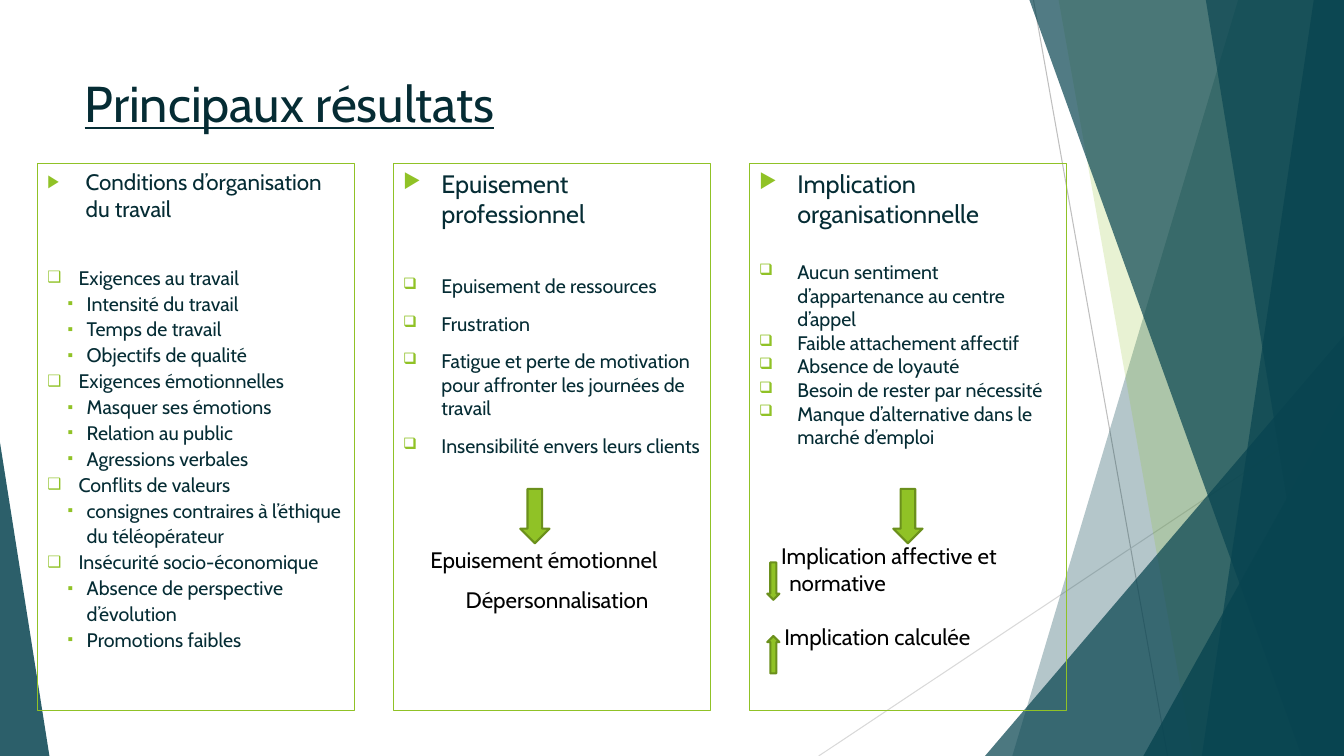
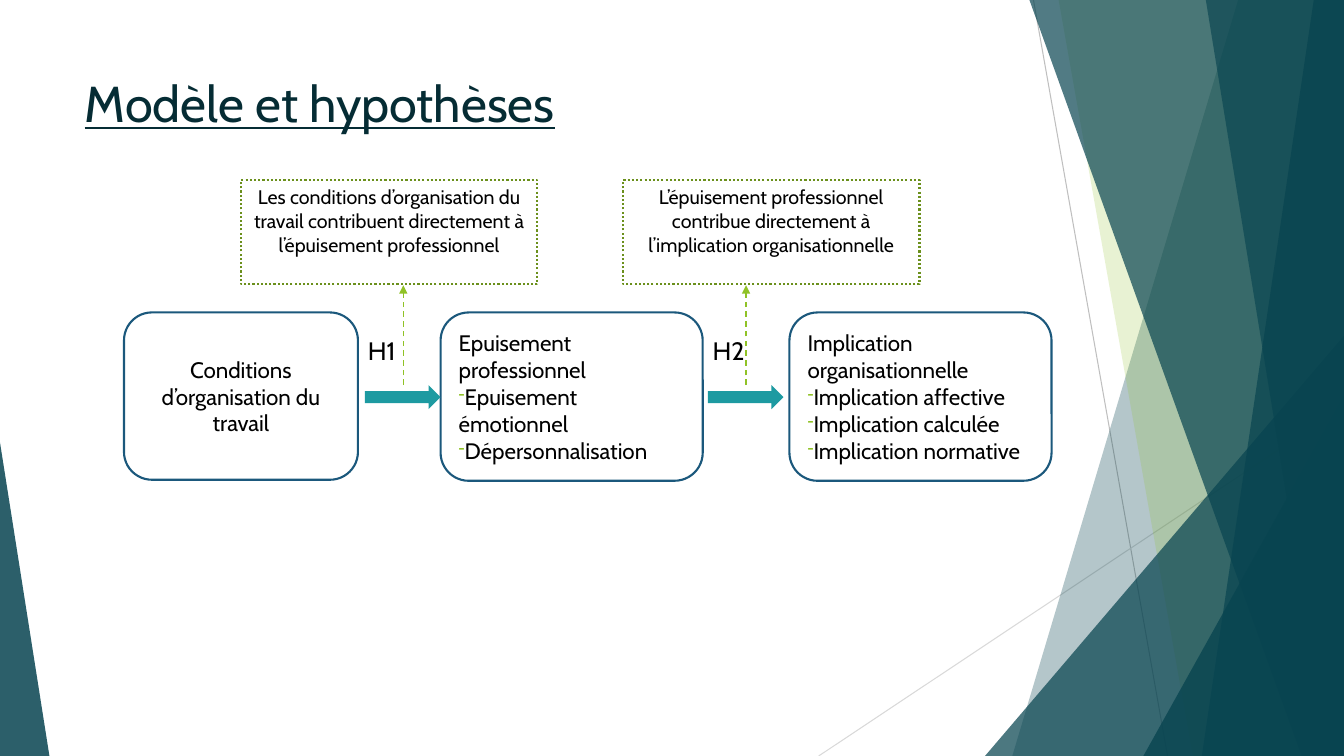
from dataclasses import dataclass

from lxml.etree import SubElement
from pptx import Presentation
from pptx.dml.color import RGBColor
from pptx.enum.dml import MSO_LINE
from pptx.enum.shapes import MSO_CONNECTOR, MSO_SHAPE
from pptx.enum.text import MSO_ANCHOR, MSO_AUTO_SIZE, PP_ALIGN
from pptx.oxml.ns import qn
from pptx.util import Inches, Pt

COLORS = {
    "ink": "052C34", "black": "000000", "green": "90C226", "olive": "6B901C",
    "teal": "084450", "arrow": "1D9AA1", "frame": "1B587C",
    "gray": "BFBFBF", "pale": "D9D9D9",
}
FONT = "Cabin"
HEIGHT = 7.5
RIGHT = 13.33


@dataclass
class Line:
    """One paragraph; margin, indent in inches, sizes and gaps in points."""
    text: str
    size: int = 16
    bullet: str = ""
    margin: float = 0
    indent: float = 0
    before: float = 0
    spacing: float = 1.0
    color: str = "black"
    align: PP_ALIGN = PP_ALIGN.LEFT


@dataclass
class Band:
    """A translucent band between the slide's top, right and bottom edges."""
    top: float
    bottom: float
    color: str
    alpha: int


@dataclass
class Wedge:
    """A translucent right triangle standing on the slide's bottom edge."""
    left: float
    top: float
    width: float
    apex: int
    alpha: int


@dataclass
class Hypothesis:
    label: str
    text: str
    note_left: float
    arrow_left: float
    label_left: float


@dataclass
class Concept:
    left: float
    width: float
    height: float
    lines: list[Line]


# Shared decoration, back to front
DECORATION = [
    Band(12.28, 10.04, "teal", 30),
    Band(10.5, 11.83, "green", 20),
    Wedge(9.77, 3.33, 3.56, 1, 72),
    Band(10.21, 12.91, "teal", 70),
    Band(13.03, 11.92, "teal", 70),
    Band(11.96, 13.18, "teal", 65),
    Wedge(11.34, 3.93, 1.99, 1, 80),
    Wedge(0, 4.39, 0.49, 0, 85),
]


# Drawing helpers
def rgb(name: str) -> RGBColor:
    return RGBColor.from_string(COLORS[name])


def style_shape(shape, fill: str = "", line: str = "", weight: float = 1.5,
                alpha: int = 100) -> None:
    shape.shadow.inherit = False
    if fill:
        shape.fill.solid()
        shape.fill.fore_color.rgb = rgb(fill)
        if alpha < 100:
            color = shape.element.spPr.find(qn("a:solidFill"))[0]
            SubElement(color, qn("a:alpha"), val=str(alpha * 1000))
    else:
        shape.fill.background()
    if line:
        shape.line.color.rgb = rgb(line)
        shape.line.width = Pt(weight)
    else:
        shape.line.fill.background()


def add_box(page, kind: MSO_SHAPE, left: float, top: float, width: float,
            height: float, **style):
    box = page.shapes.add_shape(kind, Inches(left), Inches(top),
                                Inches(width), Inches(height))
    style_shape(box, **style)
    return box


def add_line(page, start: tuple[float, float], end: tuple[float, float],
             color: str, weight: float = 0.75, arrow: bool = False) -> None:
    line = page.shapes.add_connector(
        MSO_CONNECTOR.STRAIGHT, *(Inches(value) for value in start + end))
    line.line.color.rgb = rgb(color)
    line.line.width = Pt(weight)
    if arrow:
        line.line.dash_style = MSO_LINE.DASH
        SubElement(line.element.spPr.find(qn("a:ln")), qn("a:tailEnd"), type="triangle")
    SubElement(line.element.spPr, qn("a:effectLst"))


def add_span(para, text: str, size: int, color: str, underline: bool = False) -> None:
    span = para.add_run()
    span.text = text
    span.font.name = FONT
    span.font.size = Pt(size)
    span.font.color.rgb = rgb(color)
    if underline:
        span.font.underline = True


def write_lines(box, lines: list[Line], anchor: MSO_ANCHOR = MSO_ANCHOR.TOP) -> None:
    frame = box.text_frame
    frame.word_wrap = True
    frame.auto_size = MSO_AUTO_SIZE.NONE
    frame.vertical_anchor = anchor
    for index, line in enumerate(lines):
        para = frame.add_paragraph() if index else frame.paragraphs[0]
        para.alignment = line.align
        para.line_spacing = line.spacing
        para.space_before = Pt(line.before)
        para.space_after = Pt(0)
        properties = para._p.get_or_add_pPr()
        properties.set("marL", str(Inches(line.margin)))
        properties.set("indent", str(Inches(line.indent)))
        if line.bullet:
            color = SubElement(properties, qn("a:buClr"))
            SubElement(color, qn("a:srgbClr"), val=COLORS["green"])
            SubElement(properties, qn("a:buSzPct"), val="80000")
            SubElement(properties, qn("a:buChar"), char=line.bullet)
        add_span(para, line.text, line.size, line.color)


def add_title(page, text: str, height: float) -> None:
    title = page.shapes.title
    title.left, title.top = Inches(0.74), Inches(0.67)
    title.width, title.height = Inches(9.4), Inches(height)
    frame = title.text_frame
    frame.word_wrap = True
    frame.auto_size = MSO_AUTO_SIZE.NONE
    frame.vertical_anchor = MSO_ANCHOR.TOP
    para = frame.paragraphs[0]
    para.alignment = PP_ALIGN.LEFT
    add_span(para, text, 36, "ink", underline=True)


def decorate_master(deck, page) -> None:
    """Draw the decoration on the page, then move it behind all layouts."""
    kept = len(page.shapes)
    add_line(page, (10.25, 0), (11.58, HEIGHT), "gray")
    add_line(page, (RIGHT, 4.03), (8.12, HEIGHT), "pale")
    for part in DECORATION:
        if isinstance(part, Band):
            outline = page.shapes.build_freeform(Inches(part.top), 0)
            corners = [(RIGHT, 0), (RIGHT, HEIGHT), (part.bottom, HEIGHT)]
            outline.add_line_segments([(Inches(x), Inches(y)) for x, y in corners])
            style_shape(outline.convert_to_shape(), fill=part.color, alpha=part.alpha)
        else:
            wedge = add_box(page, MSO_SHAPE.ISOSCELES_TRIANGLE, part.left, part.top,
                            part.width, HEIGHT - part.top, fill="teal", alpha=part.alpha)
            wedge.adjustments[0] = part.apex
    tree = deck.slide_master.shapes.element
    for index, shape in enumerate(list(page.shapes)[kept:]):
        shape.element.xpath(".//p:cNvPr")[0].set("id", str(100 + index))
        tree.insert(2 + index, shape.element)


# Kinds of paragraph
def heading(text: str, size: int = 18) -> Line:
    return Line(text, size, "▶", 0.38, -0.38, color="ink")


def item(text: str, before: float = 0) -> Line:
    return Line(text, 14, "❑", 0.38, -0.38, before, color="ink")


def condition_group(name: str, details: list[str], before: float = 0) -> list[Line]:
    group = [Line(name, 14, "❑", 0.31, -0.31, before, 1.1, "ink")]
    return group + [Line(text, 14, "▪", 0.39, -0.19, 0, 1.1, "ink") for text in details]


def concept_lines(name: str, parts: list[str]) -> list[Line]:
    return [Line(name)] + [Line(part, bullet="-") for part in parts]


# Slide 1: three result columns
def fill_results(page) -> None:
    add_title(page, "Principaux résultats", 0.95)
    columns = [
        [
            heading("Conditions d’organisation du travail", 16),
            *condition_group("Exigences au travail", [
                "Intensité du travail", "Temps de travail", "Objectifs de qualité"], 29.4),
            *condition_group("Exigences émotionnelles", [
                "Masquer ses émotions", "Relation au public", "Agressions verbales"]),
            *condition_group("Conflits de valeurs", [
                "consignes contraires à l’éthique du téléopérateur"]),
            *condition_group("Insécurité socio-économique", [
                "Absence de perspective d’évolution", "Promotions faibles"]),
        ],
        [
            heading("Epuisement professionnel"),
            item("Epuisement de ressources", 32.5),
            item("Frustration", 10),
            item("Fatigue et perte de motivation pour affronter les journées de travail", 10),
            item("Insensibilité envers leurs clients", 10),
            Line("Epuisement émotionnel", margin=0.27, before=63),
            Line("Dépersonnalisation", margin=0.1, before=10, align=PP_ALIGN.CENTER),
        ],
        [
            heading("Implication organisationnelle"),
            item("Aucun sentiment d’appartenance au centre d’appel", 22.5),
            item("Faible attachement affectif"),
            item("Absence de loyauté"),
            item("Besoin de rester par nécessité"),
            item("Manque d’alternative dans le marché d’emploi"),
            Line("Implication affective et normative", margin=0.3, indent=-0.08, before=67),
            Line("Implication calculée", margin=0.25, before=19.4),
        ],
    ]
    top, width, height = 1.62, 3.15, 5.43
    for index, lines in enumerate(columns):
        left = 0.37 + index * 3.53
        if index == 0:
            box = page.placeholders[1]
            box.left, box.top = Inches(left), Inches(top)
            box.width, box.height = Inches(width), Inches(height)
            box.line.color.rgb = rgb("green")
            box.line.width = Pt(0.75)
        else:
            box = add_box(page, MSO_SHAPE.RECTANGLE, left, top, width, height,
                          line="green", weight=0.75)
        write_lines(box, lines)

    # Arrows towards the outcomes, then the falling and rising trends
    for left in (5.16, 8.86):
        add_box(page, MSO_SHAPE.DOWN_ARROW, left, 4.85, 0.29, 0.54,
                fill="green", line="olive")
    for top, rotation in ((5.58, 0), (6.31, 180)):
        trend = add_box(page, MSO_SHAPE.DOWN_ARROW, 7.61, top, 0.12, 0.37,
                        fill="green", line="olive")
        trend.rotation = rotation


# Slide 2: model with its two hypotheses
def fill_model(page) -> None:
    add_title(page, "Modèle et hypothèses", 1.44)
    concepts = [
        Concept(1.23, 2.32, 1.66, [
            Line("Conditions d’organisation du travail", align=PP_ALIGN.CENTER)]),
        Concept(4.37, 2.6, 1.67, concept_lines("Epuisement professionnel", [
            "Epuisement émotionnel", "Dépersonnalisation"])),
        Concept(7.83, 2.6, 1.67, concept_lines("Implication organisationnelle", [
            "Implication affective", "Implication calculée", "Implication normative"])),
    ]
    for concept in concepts:
        box = add_box(page, MSO_SHAPE.ROUNDED_RECTANGLE, concept.left, 3.1,
                      concept.width, concept.height, line="frame")
        write_lines(box, concept.lines, MSO_ANCHOR.MIDDLE)

    hypotheses = [
        Hypothesis("H1", "Les conditions d’organisation du travail contribuent "
                   "directement à l’épuisement professionnel", 2.39, 3.62, 3.55),
        Hypothesis("H2", "L’épuisement professionnel contribue directement à "
                   "l’implication organisationnelle", 6.18, 7.02, 6.97),
    ]
    for hypothesis in hypotheses:
        add_box(page, MSO_SHAPE.RIGHT_ARROW, hypothesis.arrow_left, 3.82, 0.75, 0.24,
                fill="arrow")
        note = add_box(page, MSO_SHAPE.RECTANGLE, hypothesis.note_left, 1.79, 2.94, 1.03,
                       line="olive")
        note.line.dash_style = MSO_LINE.ROUND_DOT
        write_lines(note, [Line(hypothesis.text, 14, align=PP_ALIGN.CENTER)])
        middle = hypothesis.arrow_left + 0.38
        add_line(page, (middle, 3.82), (middle, 2.83), "green", 1, arrow=True)
        label = page.shapes.add_textbox(Inches(hypothesis.label_left), Inches(3.28),
                                        Inches(0.63), Inches(0.4))
        write_lines(label, [Line(hypothesis.label, 18)])


def main() -> None:
    deck = Presentation()
    deck.slide_width, deck.slide_height = Inches(RIGHT), Inches(HEIGHT)
    results = deck.slides.add_slide(deck.slide_layouts[1])
    decorate_master(deck, results)
    fill_results(results)
    fill_model(deck.slides.add_slide(deck.slide_layouts[5]))
    deck.save("out.pptx")


if __name__ == "__main__":
    main()
